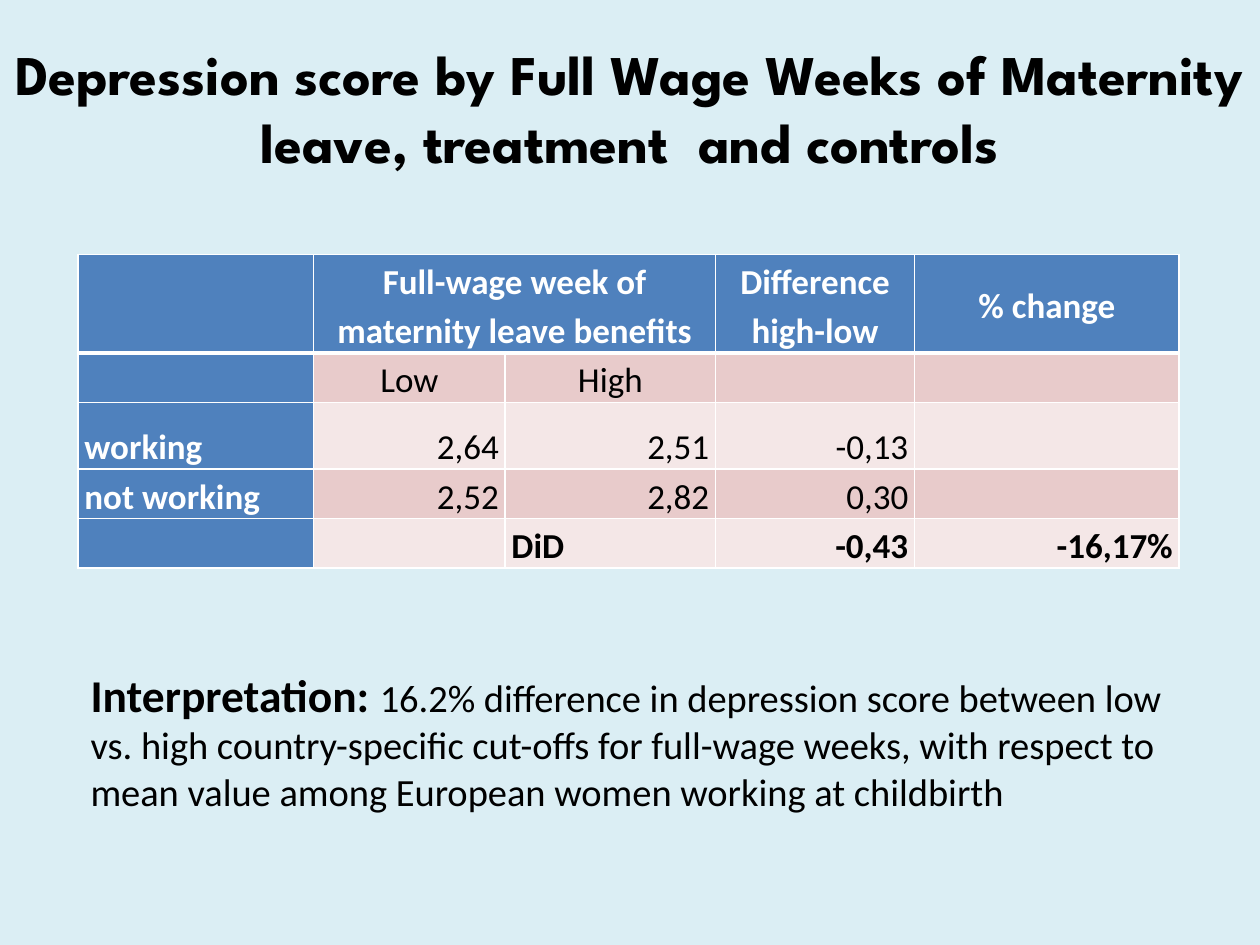
from dataclasses import dataclass
from lxml import etree
from pptx import Presentation
from pptx import util as u
from pptx.dml.color import RGBColor
from pptx.enum import text
from pptx.oxml.ns import qn

ALIGN = {"l": text.PP_ALIGN.LEFT, "c": text.PP_ALIGN.CENTER, "r": text.PP_ALIGN.RIGHT}
MID, LOW = text.MSO_ANCHOR.MIDDLE, text.MSO_ANCHOR.BOTTOM


@dataclass(frozen=True)
class Theme:
    back: str = "DBEEF4"
    head: str = "4F81BD"
    bands: tuple = ("E8CBCB", "F4E7E7")
    light: str = "FFFFFF"
    dark: str = "000000"
    title: str = "League Spartan"
    body: str = "Calibri"
    big: int = 32
    lead: int = 26
    note: int = 22
    cell: int = 20
    thin: int = 1
    thick: int = 3


class Page:
    def __init__(self, deck, theme):
        self.theme = theme
        self.slide = deck.slides.add_slide(deck.slide_layouts[6])
        fill = self.slide.background.fill
        fill.solid()
        fill.fore_color.rgb = RGBColor.from_string(theme.back)

    def style(self, run, face, size, color, bold):
        font = run.font
        font.name, font.size, font.bold = face, u.Pt(size), bold
        font.color.rgb = RGBColor.from_string(color)

    def box(self, left, top, width, height, parts, face, align="l"):
        spot = [u.Inches(n) for n in (left, top, width, height)]
        frame = self.slide.shapes.add_textbox(*spot).text_frame
        frame.word_wrap = True
        frame.vertical_anchor = MID
        para = frame.paragraphs[0]
        para.alignment = ALIGN[align]
        for words, size, bold in parts:
            run = para.add_run()
            run.text = words
            self.style(run, face, size, self.theme.dark, bold)

    def edge(self, cell, row):
        props = cell._tc.get_or_add_tcPr()
        heavy = {"lnT": row == 1, "lnB": row == 0}
        for spot, side in enumerate(("lnL", "lnR", "lnT", "lnB")):
            width = self.theme.thick if heavy.get(side) else self.theme.thin
            line = etree.Element(qn("a:" + side), w=str(u.Pt(width)))
            fill = etree.SubElement(line, qn("a:solidFill"))
            etree.SubElement(fill, qn("a:srgbClr"), val=self.theme.light)
            props.insert(spot, line)

    def cell(self, cell, row, col, words, align, bold):
        theme = self.theme
        head = row == 0 or col == 0
        cell.margin_left = cell.margin_right = u.Inches(0.05)
        cell.margin_top = cell.margin_bottom = 0
        cell.vertical_anchor = MID if row < 2 else LOW
        cell.fill.solid()
        color = theme.head if head else theme.bands[(row - 1) % 2]
        cell.fill.fore_color.rgb = RGBColor.from_string(color)
        self.edge(cell, row)
        para = cell.text_frame.paragraphs[0]
        para.text = words
        para.alignment = ALIGN[align]
        para.line_spacing = 1.15
        for run in para.runs:
            ink = theme.light if head else theme.dark
            self.style(run, theme.body, theme.cell, ink, head or bold)

    def table(self, left, top, cols, rows, data):
        spot = [u.Inches(n) for n in (left, top, sum(cols), sum(rows))]
        grid = self.slide.shapes.add_table(len(rows), len(cols), *spot).table
        for col, width in zip(grid.columns, cols):
            col.width = u.Inches(width)
        for row, height in zip(grid.rows, rows):
            row.height = u.Inches(height)
        for r, line in enumerate(data):
            for c, words in enumerate(line):
                label = c == 0 or words == "DiD"
                align = "c" if r < 2 else "l" if label else "r"
                self.cell(grid.cell(r, c), r, c, words, align, r == len(rows) - 1)
        grid.cell(0, 1).merge(grid.cell(0, 2))


def main():
    deck = Presentation()
    deck.slide_width, deck.slide_height = u.Inches(10), u.Inches(7.5)
    theme = Theme()
    page = Page(deck, theme)
    page.table(0.62, 2.02, (1.87, 1.52, 1.67, 1.58, 2.1), (0.77, 0.38, 0.53, 0.38, 0.38), (
        ("", "Full-wage week of maternity leave benefits", "", "Difference high-low", "% change"),
        ("", "Low", "High", "", ""),
        ("working", "2,64", "2,51", "-0,13", ""),
        ("not working", "2,52", "2,82", "0,30", ""),
        ("", "", "DiD", "-0,43", "-16,17%"),
    ))
    title = "Depression score by Full Wage Weeks of Maternity leave, treatment  and controls"
    page.box(0, 0.31, 10, 1.08, [(title, theme.big, True)], theme.title, "c")
    note = ("16.2% difference in depression score between low vs. high country-specific "
            "cut-offs for full-wage weeks, with respect to mean value among European "
            "women working at childbirth")
    page.box(0.62, 5.17, 8.75, 1.41, [
        ("Interpretation: ", theme.lead, True),
        (note, theme.note, False),
    ], theme.body)
    deck.save("out.pptx")


if __name__ == "__main__":
    main()
